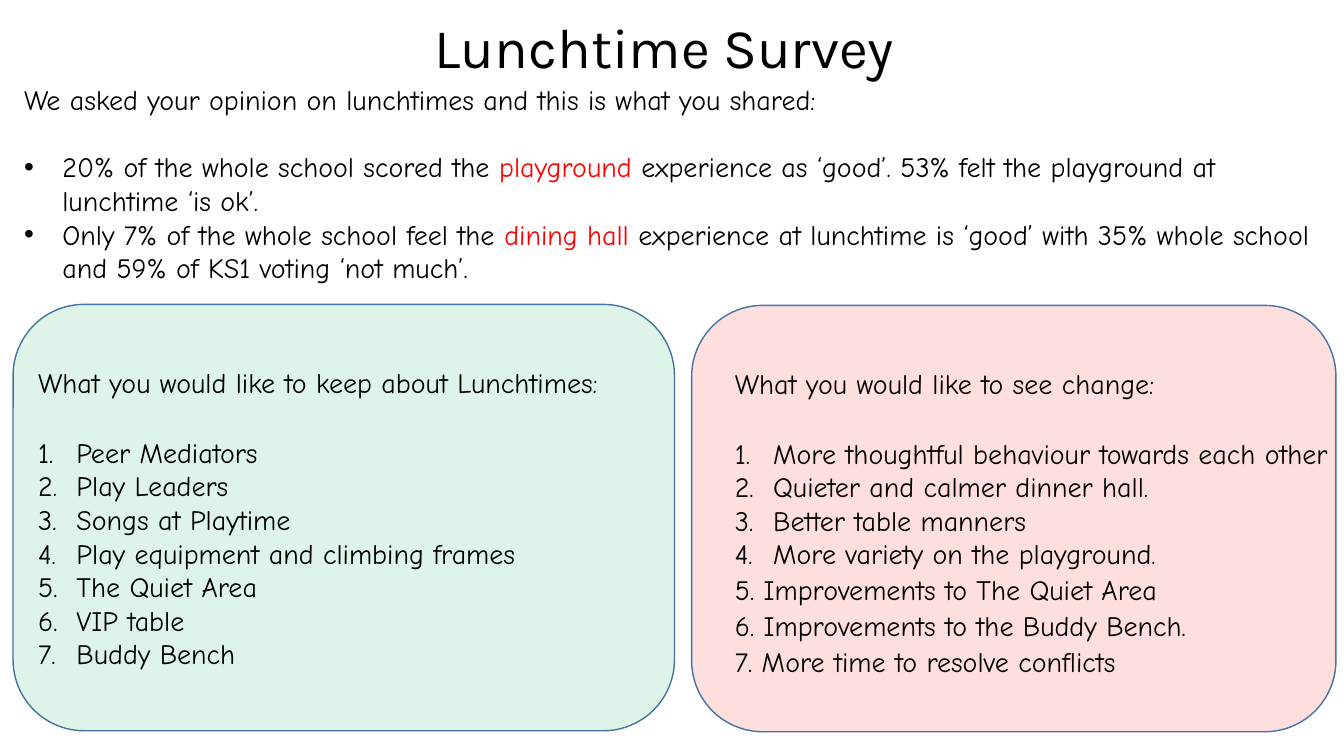
import pptx
import pptx.util
import pptx.dml.color
import pptx.enum.shapes
import pptx.enum.text
import pptx.oxml
import pptx.oxml.ns
from lxml import etree

PX = 9144
THEME = {
    "ink": "000000", "accent": "FF0000", "keep": "00B050", "change": "FF0000",
    "edge": "43739E", "alpha": 13, "line": 1,
    "head": "Karla", "body": "Comic Neue", "dot": "Arial", "big": 40, "text": 20,
    "lead": 1.07, "hang": 38,
}
BULLET = ("buChar", {"char": "•"})
NUMBER = ("buAutoNum", {"type": "arabicPeriod"})
KEEP = ["Peer Mediators", "Play Leaders", "Songs at Playtime",
        "Play equipment and climbing frames", "The Quiet Area",
        "VIP table", "Buddy Bench"]
CHANGE = ["More thoughtful behaviour towards each other",
          "Quieter and calmer dinner hall.", "Better table manners",
          "More variety on the playground."]
EXTRA = ["5. Improvements to The Quiet Area",
         "6. Improvements to the Buddy Bench.",
         "7. More time to resolve conflicts"]
FACTS = [
    [("20% of the whole school scored the ", "ink"), ("playground", "accent"),
     (" experience as ‘good’. 53% felt the playground at lunchtime ‘is ok’.", "ink")],
    [("Only 7% of the whole school feel the ", "ink"), ("dining hall ", "accent"),
     ("experience at lunchtime is ‘good’ with 35% whole school and 59% of KS1 "
      "voting ‘not much’.", "ink")],
]


def tint(name):
    return pptx.dml.color.RGBColor.from_string(THEME[name])


def apply(item, values):
    for key, value in values.items():
        setattr(item, key, value)


def child(node, tag, values):
    etree.SubElement(node, pptx.oxml.ns.qn("a:" + tag), **values)


def frame(slide, box):
    text = slide.shapes.add_textbox(*(n * PX for n in box)).text_frame
    text.word_wrap = True
    return text


def write(text, runs, mark=None, face="body", size="text", **layout):
    first = text.paragraphs[0]
    para = text.add_paragraph() if first.runs else first
    apply(para, layout)
    if mark:
        props = para._p.get_or_add_pPr()
        props.set("marL", str(THEME["hang"] * PX))
        props.set("indent", str(-THEME["hang"] * PX))
        if mark is BULLET:
            child(props, "buFont", {"typeface": THEME["dot"]})
        child(props, *mark)
    for words, color in runs:
        run = para.add_run()
        run.text = words
        apply(run.font, {"name": THEME[face], "size": pptx.util.Pt(THEME[size])})
        run.font.color.rgb = tint(color)


def title(slide, box):
    write(frame(slide, box), [("Lunchtime Survey", "ink")], face="head", size="big",
          alignment=pptx.enum.text.PP_ALIGN.CENTER)


def intro(slide, box):
    text = frame(slide, box)
    lead = "We asked your opinion on lunchtimes and this is what you shared:"
    write(text, [(lead, "ink")], space_after=pptx.util.Pt(24))
    for fact in FACTS:
        write(text, fact, BULLET)


def panel(slide, box, color, inset, width, head, items, extra=()):
    left, top, wide, high = box
    card = slide.shapes.add_shape(
        pptx.enum.shapes.MSO_SHAPE.ROUNDED_RECTANGLE, *(n * PX for n in box))
    card.shadow.inherit = False
    card.fill.solid()
    card.fill.fore_color.rgb = tint(color)
    shade = card.fill._xPr.find(".//" + pptx.oxml.ns.qn("a:srgbClr"))
    child(shade, "alpha", {"val": str(THEME["alpha"] * 1000)})
    card.line.color.rgb = tint("edge")
    card.line.width = pptx.util.Pt(THEME["line"])
    text = frame(slide, (left + inset, top + 53, width, high - 75))
    write(text, [(head, "ink")], line_spacing=THEME["lead"],
          space_after=pptx.util.Pt(26))
    for item in items:
        write(text, [(item, "ink")], NUMBER)
    for item in extra:
        write(text, [(item, "ink")], line_spacing=THEME["lead"])


def main():
    deck = pptx.Presentation()
    apply(deck, {"slide_width": 1333 * PX, "slide_height": 750 * PX})
    slide = deck.slides.add_slide(deck.slide_layouts[6])
    panel(slide, (686, 303, 639, 423), "change", 33, 664,
          "What you would like to see change:", CHANGE, EXTRA)
    panel(slide, (13, 302, 656, 423), "keep", 15, 642,
          "What you would like to keep about Lunchtimes:", KEEP)
    title(slide, (138, 7, 1042, 108))
    intro(slide, (14, 77, 1311, 305))
    deck.save("out.pptx")


if __name__ == "__main__":
    main()
